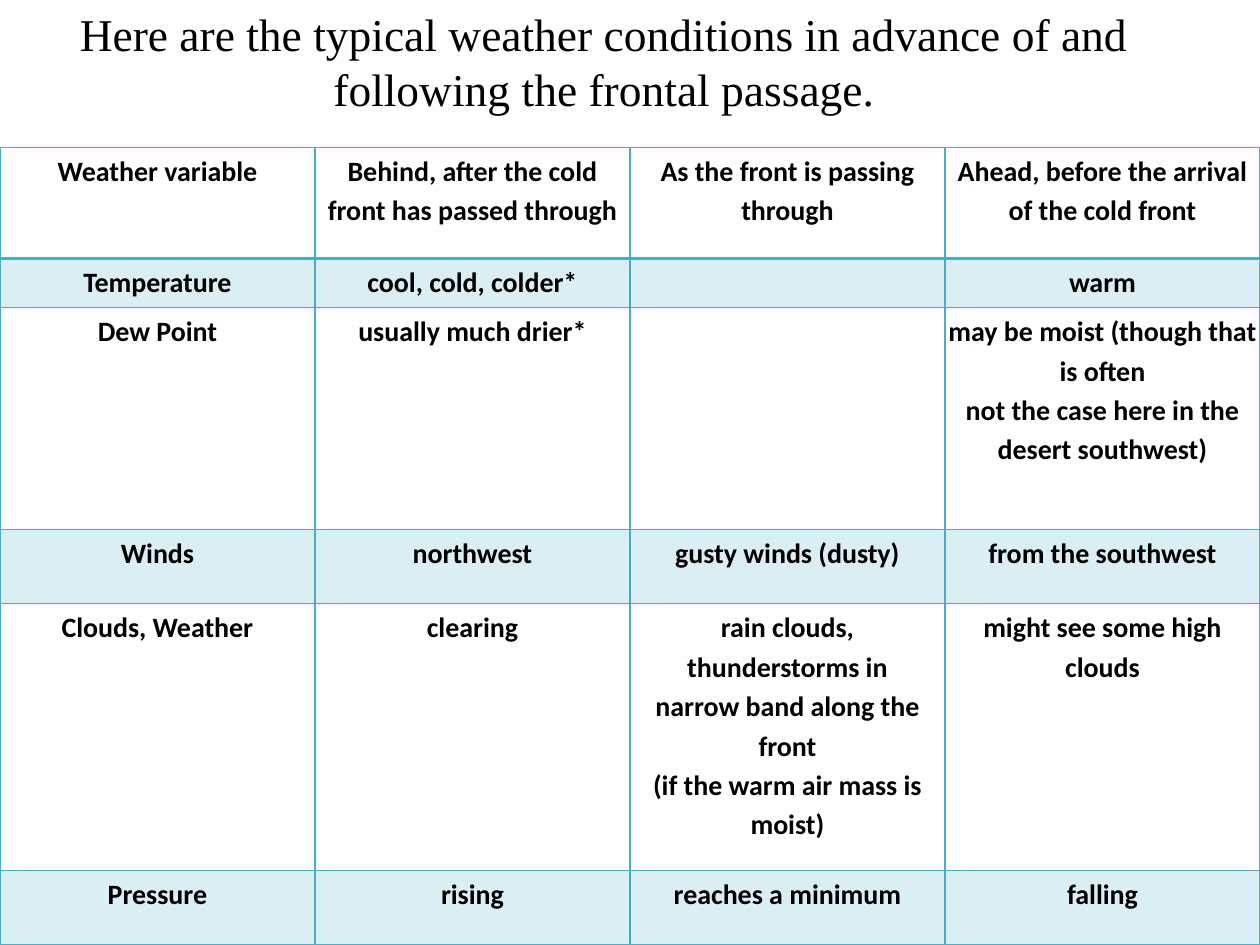
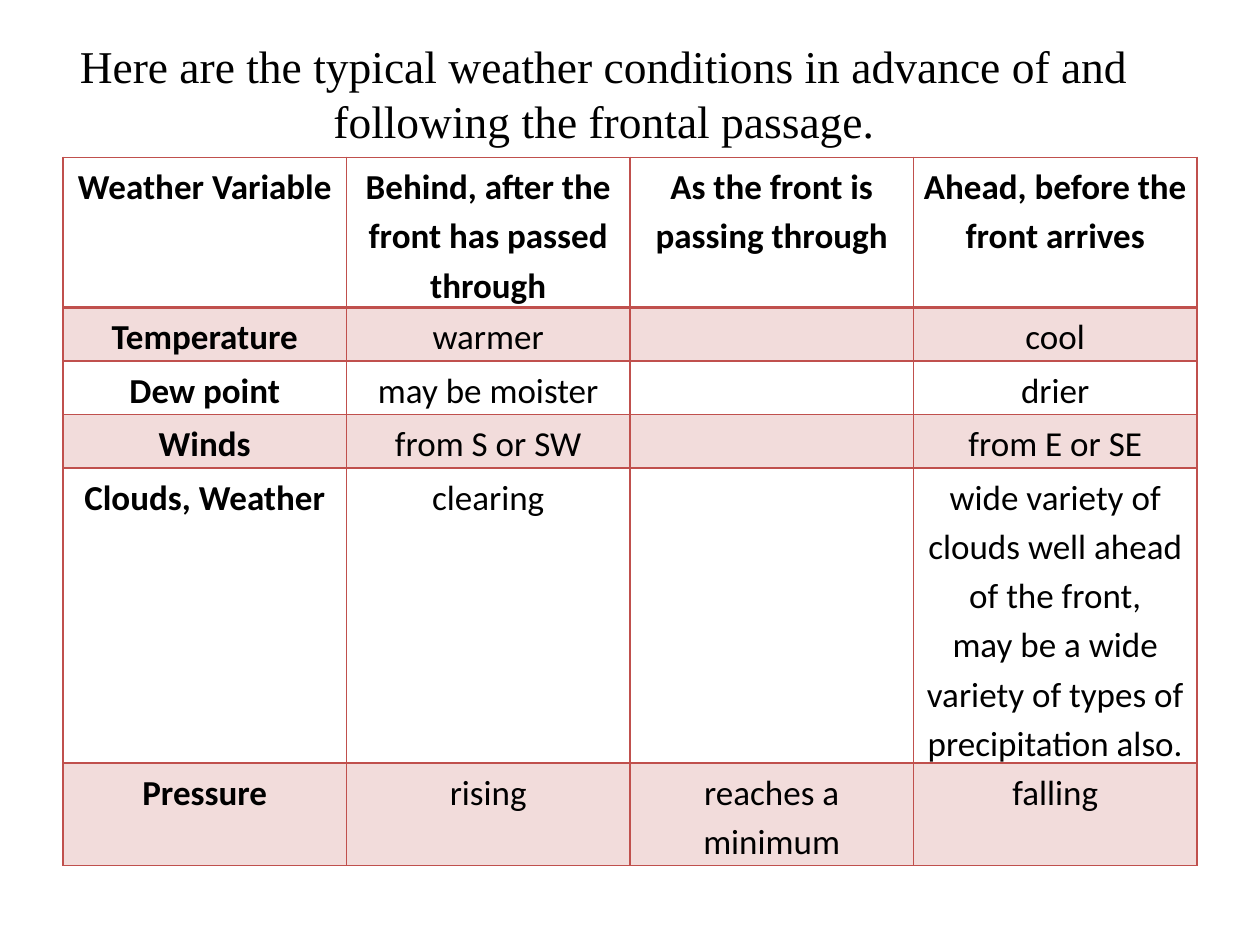
import copy
from dataclasses import dataclass

import lxml.etree
import pptx
import pptx.dml.color
import pptx.enum.text
import pptx.oxml.ns
import pptx.util

Cm = pptx.util.Cm
Pt = pptx.util.Pt
qn = pptx.oxml.ns.qn


@dataclass(frozen=True)
class Theme:
    ink: str = "000000"
    cold: str = "4BACC6"
    warm: str = "C0504D"
    head: str = "Times New Roman"
    body: str = "Calibri"
    title: int = 26
    small: int = 16
    large: int = 20
    tint: int = 20
    thin: int = 1
    thick: int = 2
    inset: float = 0.05
    lead: float = 1.15


def write(frame, text, *, font, size, color, bold=False, lead=None):
    para = frame.paragraphs[0]
    para.text = text
    para.alignment = pptx.enum.text.PP_ALIGN.CENTER
    if lead:
        para.line_spacing = lead
    for run in para.runs:
        run.font.name = font
        run.font.size = Pt(size)
        run.font.bold = bold
        run.font.color.rgb = pptx.dml.color.RGBColor.from_string(color)
    for gap in para._p.findall(qn("a:br")):
        gap.insert(0, copy.deepcopy(para.runs[0]._r.rPr))


class Deck:
    def __init__(self, theme):
        self.theme = theme
        self.file = pptx.Presentation()
        self.file.slide_width = Cm(25.4)
        self.file.slide_height = Cm(19.05)
        self.slide = None

    def start(self):
        self.slide = self.file.slides.add_slide(self.file.slide_layouts[5])

    def title(self, text, top):
        shape = self.slide.shapes.title
        shape.left, shape.top = Cm(0.43), Cm(top)
        shape.width, shape.height = Cm(23.5), Cm(2.49)
        frame = shape.text_frame
        frame.word_wrap = True
        frame.auto_size = pptx.enum.text.MSO_AUTO_SIZE.SHAPE_TO_FIT_TEXT
        frame.vertical_anchor = pptx.enum.text.MSO_ANCHOR.TOP
        write(frame, text, font=self.theme.head, size=self.theme.title, color=self.theme.ink)

    def border(self, cell, color, row):
        sides = {"lnL": False, "lnR": False, "lnT": row == 1, "lnB": row == 0}
        for side, heavy in sides.items():
            width = self.theme.thick if heavy else self.theme.thin
            line = lxml.etree.SubElement(cell._tc.get_or_add_tcPr(), qn(f"a:{side}"), w=str(Pt(width)))
            fill = lxml.etree.SubElement(line, qn("a:solidFill"))
            lxml.etree.SubElement(fill, qn("a:srgbClr"), val=color)

    def shade(self, cell, color):
        cell.fill.solid()
        cell.fill.fore_color.rgb = pptx.dml.color.RGBColor.from_string(color)
        tone = cell._tc.tcPr.find(qn("a:solidFill")).find(qn("a:srgbClr"))
        lxml.etree.SubElement(tone, qn("a:alpha"), val=str(self.theme.tint * 1000))

    def table(self, data, left, top, width, highs, color, size, strong):
        count = len(data[0])
        frame = self.slide.shapes.add_table(
            len(data), count, Cm(left), Cm(top), Cm(width), Cm(sum(highs)))
        grid = frame.table
        grid.first_row = grid.horz_banding = False
        for col in grid.columns:
            col.width = Cm(width / count)
        for row, (high, texts) in enumerate(zip(highs, data)):
            grid.rows[row].height = Cm(high)
            for col, text in enumerate(texts):
                cell = grid.cell(row, col)
                cell.margin_left = cell.margin_right = Cm(self.theme.inset)
                cell.margin_top = cell.margin_bottom = Cm(self.theme.inset)
                self.border(cell, color, row)
                if row % 2:
                    self.shade(cell, color)
                else:
                    cell.fill.background()
                if text:
                    write(cell.text_frame, text, font=self.theme.body, size=size,
                          color=self.theme.ink, lead=self.theme.lead,
                          bold=strong or row == 0 or col == 0)


TITLE = "Here are the typical weather conditions in advance of and following the frontal passage."

COLD = [
    ["Weather variable", "Behind, after the cold front has passed through",
     "As the front is passing through", "Ahead, before the arrival of the cold front"],
    ["Temperature", "cool, cold, colder*", "", "warm"],
    ["Dew Point", "usually much drier*", "",
     "may be moist (though that is often\nnot the case here in the desert southwest)"],
    ["Winds", "northwest", "gusty winds (dusty)", "from the southwest"],
    ["Clouds, Weather", "clearing",
     "rain clouds, thunderstorms in\nnarrow band along the front\n(if the warm air mass is moist)",
     "might see some high clouds"],
    ["Pressure", "rising", "reaches a minimum", "falling"],
]

WARM = [
    ["Weather Variable", "Behind, after the front has passed through",
     "As the front is passing through", "Ahead, before the front arrives"],
    ["Temperature", "warmer", "", "cool"],
    ["Dew point", "may be moister", "", "drier"],
    ["Winds", "from S or SW", "", "from E or SE"],
    ["Clouds, Weather", "clearing", "",
     "wide variety of clouds well ahead of the front,\n"
     "may be a wide variety of types of precipitation also."],
    ["Pressure", "rising", "reaches a minimum", "falling"],
]


def main():
    theme = Theme()
    deck = Deck(theme)

    deck.start()
    deck.title(TITLE, top=0)
    deck.table(COLD, left=0, top=2.97, width=25.4,
               highs=[2.24, 0.99, 4.47, 1.5, 5.38, 1.5],
               color=theme.cold, size=theme.small, strong=True)

    deck.start()
    deck.title(TITLE, top=0.64)
    deck.table(WARM, left=1.27, top=3.17, width=22.86,
               highs=[3.02, 1.08, 1.08, 1.08, 5.95, 2.06],
               color=theme.warm, size=theme.large, strong=False)

    deck.file.save("out.pptx")


if __name__ == "__main__":
    main()
